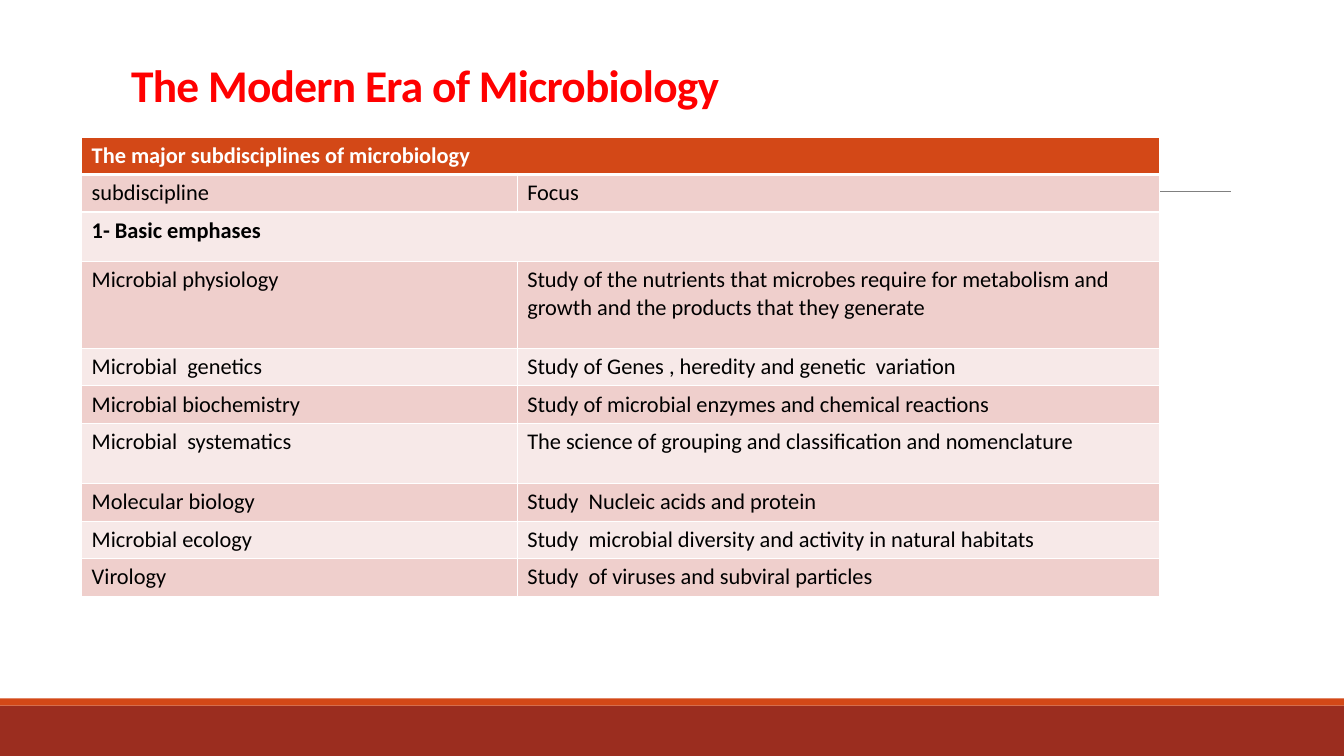
from pptx import Presentation
from pptx.dml.color import RGBColor
from pptx.enum.shapes import MSO_CONNECTOR, MSO_SHAPE
from pptx.enum.text import MSO_ANCHOR, PP_ALIGN
from pptx.oxml.ns import qn
from pptx.util import Inches, Pt
from lxml import etree

RECT = MSO_SHAPE.RECTANGLE
STRAIGHT = MSO_CONNECTOR.STRAIGHT
TOP = MSO_ANCHOR.TOP
BOTTOM = MSO_ANCHOR.BOTTOM
LEFT = PP_ALIGN.LEFT

WHITE = RGBColor(0xFF, 0xFF, 0xFF)
BLACK = RGBColor(0, 0, 0)
RED = RGBColor(0xFF, 0, 0)
ORANGE = RGBColor(0xD3, 0x48, 0x17)
BRICK = RGBColor(0x9B, 0x2D, 0x1F)
GRAY = RGBColor(0x80, 0x80, 0x80)
BAND_DARK = RGBColor(0xEF, 0xCF, 0xCC)
BAND_LIGHT = RGBColor(0xF7, 0xE9, 0xE8)

SLIDE_W, SLIDE_H = 13.33, 7.5
ROW_H = 0.37
COLUMNS = [4.32, 6.37]
ROWS = [
    (ROW_H, "The major subdisciplines of microbiology"),
    (ROW_H, "subdiscipline", "Focus"),
    (0.49, "1- Basic emphases"),
    (0.86, "Microbial physiology",
     "Study of the nutrients that microbes require for metabolism and "
     "growth and the products that they generate"),
    (ROW_H, "Microbial  genetics", "Study of Genes , heredity and genetic  variation"),
    (ROW_H, "Microbial biochemistry", "Study of microbial enzymes and chemical reactions"),
    (0.6, "Microbial  systematics",
     "The science of grouping and classification and nomenclature"),
    (ROW_H, "Molecular biology", "Study  Nucleic acids and protein"),
    (ROW_H, "Microbial ecology", "Study  microbial diversity and activity in natural habitats"),
    (ROW_H, "Virology", "Study  of viruses and subviral particles"),
]


class SlideBuilder:
    font = "Calibri"

    def __init__(self, prs):
        self.s = prs.slides.add_slide(prs.slide_layouts[5])
        fill = self.s.background.fill
        fill.solid()
        fill.fore_color.rgb = WHITE

    def add_text(self, p, text, color, **formats):
        r = p.add_run()
        r.text = text
        for name, value in {"name": self.font, **formats}.items():
            setattr(r.font, name, value)
        r.font.color.rgb = color
        return r

    def title(self, text, x, y, w, h):
        sp = self.s.shapes.title
        sp.left, sp.top, sp.width, sp.height = map(Inches, (x, y, w, h))
        tf = sp.text_frame
        formats = {"word_wrap": True, "vertical_anchor": BOTTOM,
                   "margin_bottom": Inches(0.09)}
        for name, value in formats.items():
            setattr(tf, name, value)
        p = tf.paragraphs[0]
        p.alignment = LEFT
        p.line_spacing = 0.85
        r = self.add_text(p, text, RED, size=Pt(32.4), bold=True)
        r.font._element.set("spc", "-50")

    def bar(self, y, h, color):
        sp = self.s.shapes.add_shape(RECT, 0, Inches(y), Inches(SLIDE_W), Inches(h))
        sp.shadow.inherit = False
        sp.fill.solid()
        sp.fill.fore_color.rgb = color
        sp.line.fill.background()

    def rule(self, x1, x2, y):
        line = self.s.shapes.add_connector(
            STRAIGHT, Inches(x1), Inches(y), Inches(x2), Inches(y))
        line.line.color.rgb = GRAY
        line.line.width = Pt(0.5)
        etree.SubElement(line._element.spPr, qn("a:effectLst"))

    def borders(self, cell, bottom):
        tcPr = cell._tc.get_or_add_tcPr()
        for side, width in (("L", 1), ("R", 1), ("T", 1), ("B", bottom)):
            ln = etree.SubElement(tcPr, qn(f"a:ln{side}"), w=str(Pt(width)))
            fill = etree.SubElement(ln, qn("a:solidFill"))
            etree.SubElement(fill, qn("a:srgbClr"), val=str(WHITE))

    def table(self, x, y, columns, rows):
        heights = [row[0] for row in rows]
        frame = self.s.shapes.add_table(
            len(rows), len(columns), Inches(x), Inches(y),
            Inches(sum(columns)), Inches(sum(heights)))
        table = frame.table
        for column, width in zip(table.columns, columns):
            column.width = Inches(width)
        for i, (height, *texts) in enumerate(rows):
            table.rows[i].height = Inches(height)
            heading = len(texts) == 1
            band = ORANGE if i == 0 else BAND_DARK if i % 2 else BAND_LIGHT
            for j in range(len(columns)):
                cell = table.cell(i, j)
                self.borders(cell, 3 if i == 0 else 1)
                cell.fill.solid()
                cell.fill.fore_color.rgb = band
                cell.vertical_anchor = TOP
            if heading:
                table.cell(i, 0).merge(table.cell(i, len(columns) - 1))
            for j, text in enumerate(texts):
                p = table.cell(i, j).text_frame.paragraphs[0]
                self.add_text(p, text, BLACK if i else WHITE, size=Pt(16), bold=heading)


def main():
    prs = Presentation()
    prs.slide_width, prs.slide_height = Inches(SLIDE_W), Inches(SLIDE_H)
    slide = SlideBuilder(prs)
    slide.bar(7, 0.5, BRICK)
    slide.bar(6.93, 0.07, ORANGE)
    slide.rule(1.31, 12.21, 1.9)
    slide.title("The Modern Era of Microbiology", 1.2, 0.47, 6.21, 0.73)
    slide.table(0.81, 1.36, COLUMNS, ROWS)
    prs.save("out.pptx")


if __name__ == "__main__":
    main()
